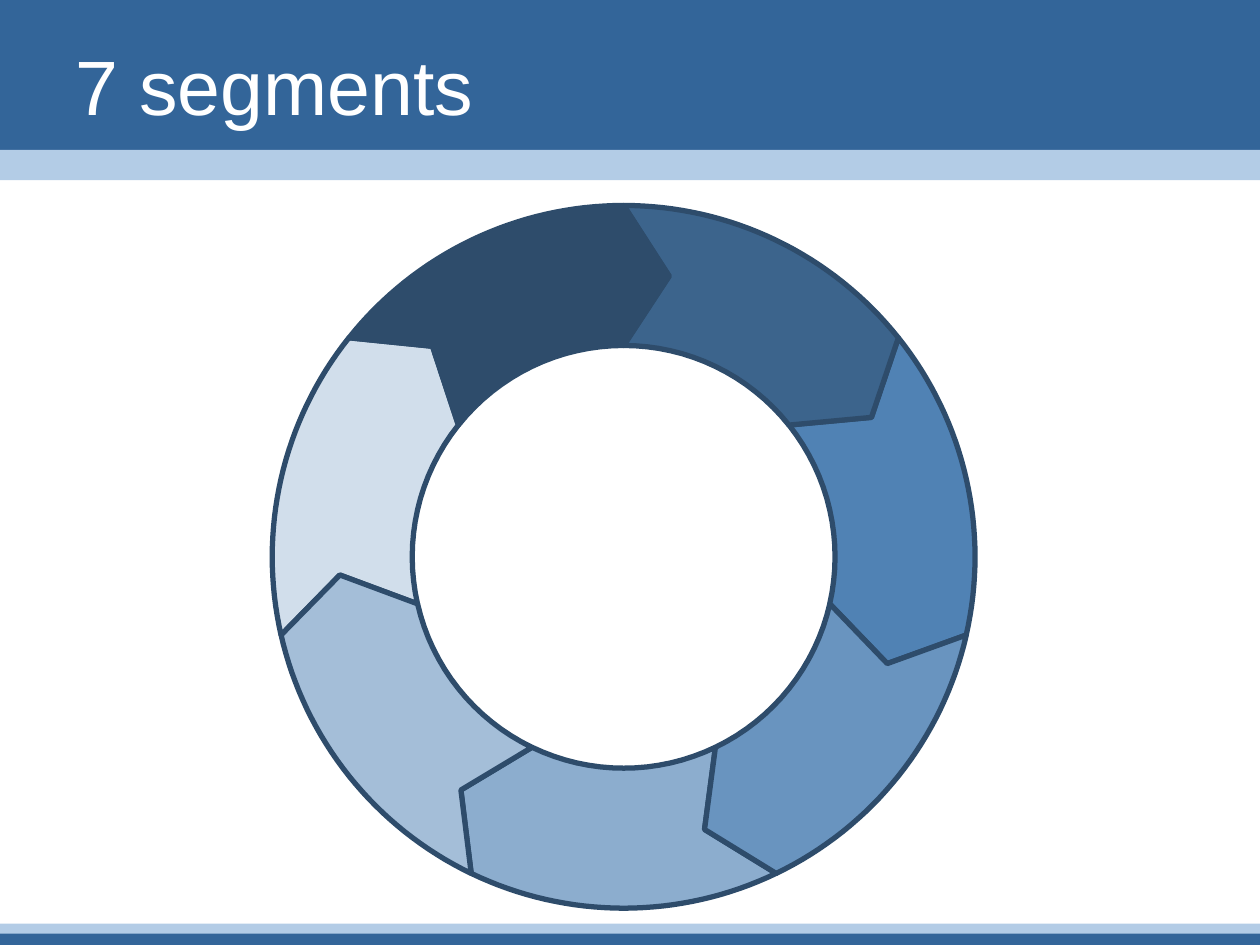
from math import cos, radians, sin

from pptx import Presentation
from pptx.dml.color import RGBColor
from pptx.enum.shapes import MSO_SHAPE
from pptx.enum.text import MSO_ANCHOR
from pptx.util import Pt

RECTANGLE = MSO_SHAPE.RECTANGLE
MIDDLE = MSO_ANCHOR.MIDDLE

COLORS = {
    "band": "336599",
    "stripe": "B3CCE6",
    "title": "FFFFFF",
    "outline": "2E4C6B",
}
# Clockwise from the top of the ring
SEGMENT_COLORS = ["3C648C", "5082B4", "6994BF", "8CADCE", "A4BED8", "D1DEEB", "2E4C6B"]
STACKING = [1, 3, 5, 2, 0, 6, 4]  # back to front

SLIDE_WIDTH, SLIDE_HEIGHT = 720, 540
CENTER_X, CENTER_Y = 356.4, 318.2
OUTER_RADIUS, INNER_RADIUS, TIP_RADIUS = 200.8, 120.8, 162.5
SWEEP = 360 / len(SEGMENT_COLORS)
TIP_ANGLE = 9.2
OUTER_STEPS, INNER_STEPS = 32, 16


def paint(shape, color):
    shape.shadow.inherit = False
    shape.fill.solid()
    shape.fill.fore_color.rgb = RGBColor.from_string(color)


def add_bar(slide, top, height, color):
    bar = slide.shapes.add_shape(RECTANGLE, 0, Pt(top), Pt(SLIDE_WIDTH), Pt(height))
    paint(bar, color)
    bar.line.fill.background()


def add_title(slide, text):
    box = slide.shapes.add_textbox(Pt(36), Pt(20.16), Pt(653), Pt(56.88))
    frame = box.text_frame
    frame.word_wrap = True
    frame.vertical_anchor = MIDDLE
    paragraph = frame.paragraphs[0]
    paragraph.text = text
    paragraph.font.name = "Arial"
    paragraph.font.size = Pt(44)
    paragraph.font.color.rgb = RGBColor.from_string(COLORS["title"])


def ring_point(radius, angle):
    """Point on the ring, with the angle in degrees clockwise from the top."""
    turn = radians(angle)
    return Pt(CENTER_X + radius * sin(turn)), Pt(CENTER_Y - radius * cos(turn))


def arc(radius, start, end, steps):
    return [ring_point(radius, start + (end - start) * i / steps)
            for i in range(steps + 1)]


def add_segment(slide, index):
    """Ring segment with a notch at its start and a tip at its end."""
    start, end = index * SWEEP, (index + 1) * SWEEP
    points = [
        *arc(OUTER_RADIUS, start, end, OUTER_STEPS),
        ring_point(TIP_RADIUS, end + TIP_ANGLE),
        *arc(INNER_RADIUS, end, start, INNER_STEPS),
        ring_point(TIP_RADIUS, start + TIP_ANGLE),
    ]
    builder = slide.shapes.build_freeform(*points[0])
    builder.add_line_segments(points[1:], close=True)
    segment = builder.convert_to_shape()
    paint(segment, SEGMENT_COLORS[index])
    segment.line.color.rgb = RGBColor.from_string(COLORS["outline"])
    segment.line.width = Pt(3)


def main():
    deck = Presentation()
    deck.slide_width, deck.slide_height = Pt(SLIDE_WIDTH), Pt(SLIDE_HEIGHT)
    slide = deck.slides.add_slide(deck.slide_layouts[6])

    add_bar(slide, 0, 94.32, COLORS["band"])
    add_bar(slide, 530.64, 11.52, COLORS["band"])
    add_bar(slide, 85.68, 17.28, COLORS["stripe"])
    add_bar(slide, 527.76, 5.76, COLORS["stripe"])
    add_title(slide, "7 segments")
    for index in STACKING:
        add_segment(slide, index)

    deck.save("out.pptx")


if __name__ == "__main__":
    main()
